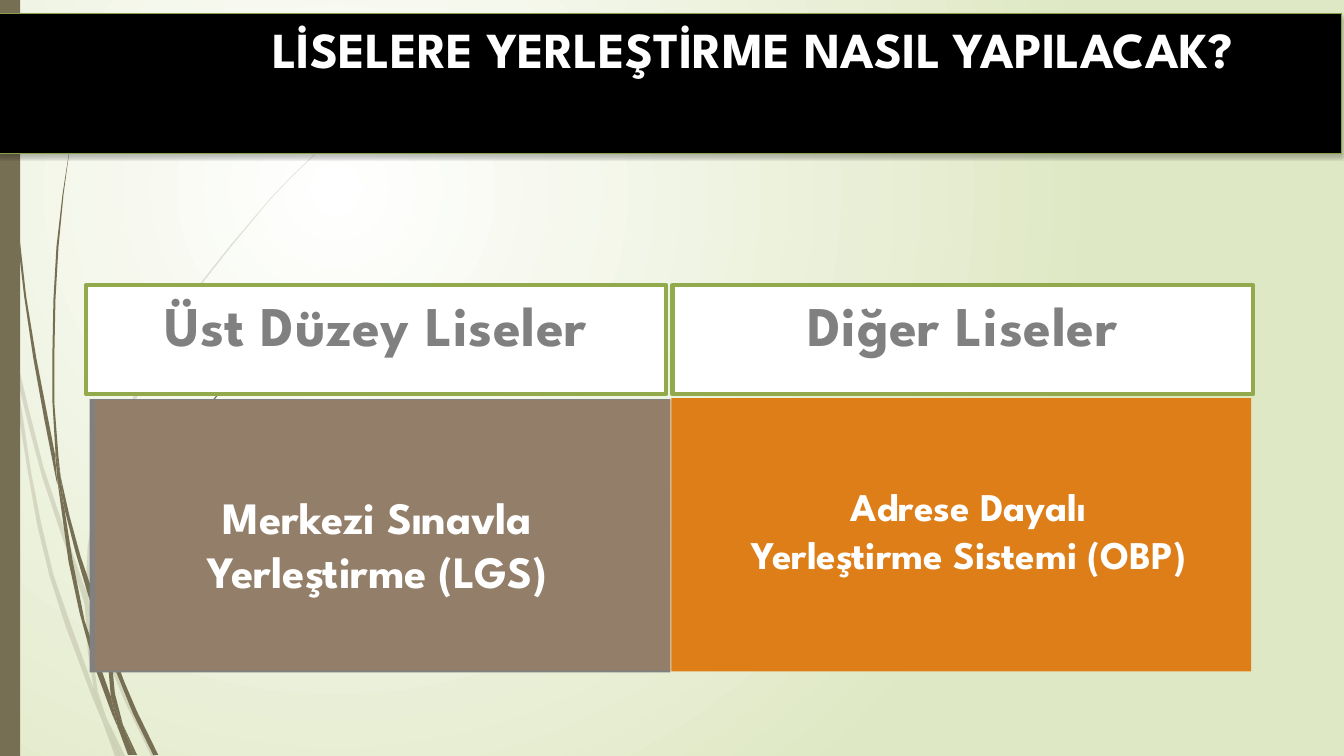
import pptx
import pptx.dml.color
import pptx.enum.shapes
import pptx.enum.text
import pptx.oxml
import pptx.oxml.ns
import pptx.util

COLUMNS, ROWS = 1333, 750
CELL = pptx.util.Inches(0.01)
FONT = "League Spartan"
COLORS = {
    "white": "FFFFFF", "black": "000000", "mist": "DFE8C4", "bark": "766F54",
    "moss": "8BA249", "leaf": "92AA4C", "orange": "DE7E18", "gray": "808080",
}

FAINT_WISPS = [
    [(11, 350), (9, 322), (0, 282), (0, 299), (10, 344)],
    [(58, 522), (84, 599), (85, 586), (62, 520), (43, 463), (28, 404),
     (14, 345), (17, 376), (29, 425), (42, 474)],
    [(92, 607), (88, 596), (88, 610), (123, 694), (150, 750), (155, 750),
     (127, 692), (115, 664), (103, 636)],
    [(119, 750), (124, 750), (105, 711)],
    [(93, 683), (70, 619), (53, 570), (41, 520), (31, 469), (17, 376), (11, 350),
     (15, 390), (28, 470), (37, 521), (49, 571), (65, 621), (92, 693), (101, 714),
     (99, 707)],
    [(84, 599), (87, 646), (93, 683), (96, 692), (105, 711), (97, 686), (91, 646),
     (88, 610), (88, 608)],
    [(88, 584), (92, 542), (98, 502), (110, 462), (123, 423), (140, 385), (160, 349),
     (180, 312), (203, 278), (229, 245), (268, 198), (290, 175), (312, 154), (312, 153),
     (289, 175), (268, 197), (228, 244), (202, 277), (178, 311), (158, 348),
     (137, 383), (120, 422), (107, 461), (94, 501), (87, 542), (85, 584), (85, 586),
     (88, 596)],
    [(101, 714), (114, 750), (119, 750)],
    [(88, 608), (88, 596), (85, 586), (84, 599)],
    [(96, 692), (93, 683), (99, 707), (101, 714), (119, 750), (105, 711)],
]
DARK_WISPS = [
    [(7, 110), (11, 171), (17, 233), (24, 294), (33, 355), (44, 416), (56, 477), (57, 481),
     (55, 457), (55, 453), (36, 355), (26, 294), (19, 232), (12, 171), (8, 109),
     (5, 48), (4, 0), (3, 0), (4, 48)],
    [(88, 592), (106, 645), (106, 631), (93, 590), (80, 552), (69, 512), (60, 472),
     (64, 505), (75, 548)],
    [(113, 649), (110, 641), (111, 656), (132, 708), (152, 749), (157, 749),
     (136, 706), (124, 678)],
    [(110, 691), (98, 657), (84, 616), (72, 556), (64, 505), (57, 477), (68, 557),
     (79, 608), (93, 659), (111, 708), (117, 722), (116, 717)],
    [(60, 472), (58, 453), (54, 401), (54, 349), (55, 297), (58, 245), (63, 193), (70, 141),
     (62, 193), (56, 245), (53, 297), (52, 349), (52, 399), (55, 449)],
    [(133, 749), (136, 749), (122, 719)],
    [(57, 477), (64, 505), (60, 472), (55, 449), (55, 453)],
    [(111, 633), (115, 592), (125, 552), (140, 514), (158, 476), (180, 440), (205, 406),
     (231, 374), (245, 359), (261, 344), (260, 344), (245, 358), (231, 373),
     (204, 405), (178, 439), (156, 474), (137, 512), (122, 551), (111, 591),
     (106, 631), (110, 641)],
    [(117, 722), (127, 749), (131, 749)],
    [(106, 645), (110, 691), (116, 706), (122, 719), (114, 688), (111, 656), (109, 651)],
    [(116, 706), (110, 691), (116, 717), (117, 722), (130, 749), (133, 749), (122, 719)],
]


class PlacementSlide:
    """Draws slide elements in one style on a fine grid of columns and rows."""

    def __init__(self, deck):
        self.slide = deck.slides.add_slide(deck.slide_layouts[5])
        self.shapes = self.slide.shapes

    def color(self, name):
        return pptx.dml.color.RGBColor.from_string(COLORS[name])

    def xml(self, body):
        namespaces = pptx.oxml.ns.nsdecls("a", "p")
        head, tail = body.split(">", 1)
        return pptx.oxml.parse_xml(f"{head} {namespaces}>{tail}")

    def backdrop(self, inner, outer):
        self.slide._element.cSld.insert(0, self.xml(
            '<p:bg><p:bgPr><a:gradFill rotWithShape="1"><a:gsLst>'
            f'<a:gs pos="0"><a:srgbClr val="{COLORS[inner]}"/></a:gs>'
            f'<a:gs pos="100000"><a:srgbClr val="{COLORS[outer]}"/></a:gs>'
            '</a:gsLst><a:path path="circle"><a:fillToRect l="50000" t="50000" '
            'r="100000" b="100000"/></a:path></a:gradFill><a:effectLst/></p:bgPr></p:bg>'))

    def paint(self, shape, fill, opacity=100, line=None, weight=0):
        shape.fill.solid()
        shape.fill.fore_color.rgb = self.color(fill)
        if opacity < 100:
            tint = shape._element.spPr.find(".//" + pptx.oxml.ns.qn("a:srgbClr"))
            tint.append(self.xml(f'<a:alpha val="{opacity * 1000}"></a:alpha>'))
        if line:
            shape.line.color.rgb = self.color(line)
            shape.line.width = pptx.util.Pt(weight)
        else:
            shape.line.fill.background()

    def wisp(self, outline, opacity):
        builder = self.shapes.build_freeform(*outline[0], scale=CELL)
        builder.add_line_segments(outline[1:], close=True)
        strand = builder.convert_to_shape()
        strand.shadow.inherit = False
        self.paint(strand, "bark", opacity)

    def panel(self, area, fill, **look):
        panel = self.shapes.add_shape(
            pptx.enum.shapes.MSO_SHAPE.RECTANGLE, *(CELL * n for n in area))
        panel.shadow.inherit = False
        self.paint(panel, fill, **look)
        return panel

    def lettering(self, holder, lines, size, color="white", align="CENTER", spacing=0):
        frame = holder.text_frame
        frame.word_wrap = True
        frame.auto_size = pptx.enum.text.MSO_AUTO_SIZE.NONE
        frame.vertical_anchor = pptx.enum.text.MSO_ANCHOR.TOP
        for number, line in enumerate(lines):
            paragraph = frame.add_paragraph() if number else frame.paragraphs[0]
            paragraph.alignment = pptx.enum.text.PP_ALIGN[align]
            run = paragraph.add_run()
            run.text = line
            run.font.name = FONT
            run.font.size = pptx.util.Pt(size)
            run.font.bold = True
            run.font.color.rgb = self.color(color)
            if spacing:
                run._r.get_or_add_rPr().set("spc", str(round(spacing * 100)))

    def caption(self, area, lines, size):
        self.lettering(self.shapes.add_textbox(*(CELL * n for n in area)), lines, size)

    def title(self, area, text, indent):
        title = self.shapes.title
        title.left, title.top, title.width, title.height = (CELL * n for n in area)
        self.shapes._spTree.append(title._element)
        self.paint(title, "black", line="moss", weight=0.75)
        title._element.spPr.append(self.xml(
            '<a:effectLst><a:outerShdw blurRad="38100" dist="25400" dir="5400000" '
            f'rotWithShape="0"><a:srgbClr val="{COLORS["black"]}"><a:alpha val="25000"/>'
            '</a:srgbClr></a:outerShdw></a:effectLst>'))
        self.lettering(title, [text], 36, align="LEFT")
        title.text_frame.margin_left = CELL * indent


def main():
    deck = pptx.Presentation()
    deck.slide_width, deck.slide_height = CELL * COLUMNS, CELL * ROWS
    page = PlacementSlide(deck)
    page.backdrop("white", "mist")
    for wisps, opacity in ((FAINT_WISPS, 20), (DARK_WISPS, 100)):
        for outline in wisps:
            page.wisp(outline, opacity)
    page.panel((0, 0, 20, ROWS), "bark")
    page.title((-2, 13, COLUMNS, 139), "LİSELERE YERLEŞTİRME NASIL YAPILACAK?", 272)

    page.panel((666, 395, 575, 271), "orange")
    page.caption((677, 474, 567, 104), ["Adrese Dayalı", "Yerleştirme Sistemi (OBP)"], 28)
    page.panel((89, 396, 576, 271), "gray")
    page.panel((94, 397, 576, 268), "orange", opacity=21)
    page.caption((162, 481, 425, 118), ["Merkezi Sınavla Yerleştirme (LGS)"], 32)

    for column, school in enumerate(("Üst Düzey Liseler", "Diğer Liseler")):
        header = page.panel(
            (85 + 582 * column, 283, 576, 108), "white", line="leaf", weight=3)
        page.lettering(header, [school], 40, color="gray", spacing=0.5)
    deck.save("out.pptx")


if __name__ == "__main__":
    main()
